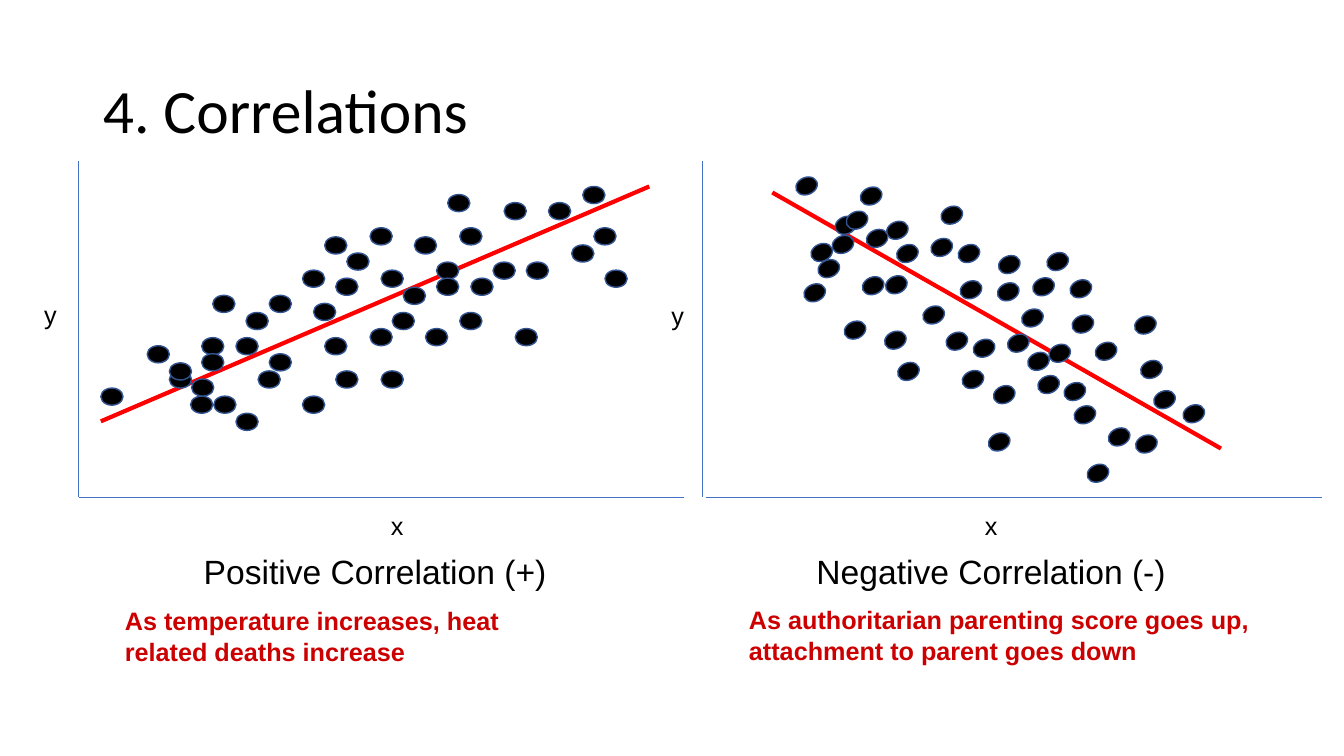
from dataclasses import dataclass

from lxml.etree import SubElement
from pptx import Presentation
from pptx.dml.color import RGBColor
from pptx.enum.shapes import MSO_CONNECTOR as Connector, MSO_SHAPE as Preset
from pptx.enum.text import MSO_ANCHOR as Anchor, PP_ALIGN as Align
from pptx.oxml.ns import qn
from pptx.util import Emu, Pt

PX = 9144  # one px is a hundredth of an inch


@dataclass(frozen=True)
class Theme:
    ink: str = "000000"
    axis: str = "4472C4"
    trend: str = "FF0000"
    dot_edge: str = "325491"
    note: str = "CC0000"
    title_font: str = "Calibri"
    body_font: str = "Arial"
    title_size: int = 44
    caption_size: int = 24
    label_size: int = 18
    axis_width: float = 0.5
    trend_width: float = 3
    dot_width: float = 1


THEME = Theme()
DOT_SIZE = (22, 17)

# Dot positions are measured from the top of the y axis
POSITIVE = dict(
    box=(78, 160, 600, 333), x_axis_start=0, trend=(22, 258, 566, 25), tilt=0,
    caption="Positive Correlation (+)", caption_box=(22, 382, 544, 50),
    note=["As temperature increases, heat", "related deaths increase"],
    note_box=(36, 436, 402, 71), note_wrap=False,
    axis_labels={"x": (300, 341, 33, 40), "y": (-44, 132, 33, 40)},
    dots=[
        (68, 183), (133, 133), (111, 233), (90, 208), (122, 175), (90, 200),
        (22, 225), (112, 216), (189, 191), (166, 150), (134, 233), (178, 208),
        (156, 175), (122, 191), (156, 250), (189, 133), (333, 75), (255, 116),
        (311, 150), (244, 175), (233, 141), (222, 108), (244, 75), (266, 91),
        (289, 66), (300, 108), (322, 125), (355, 100), (355, 116), (378, 66),
        (366, 33), (389, 116), (411, 100), (433, 166), (422, 41), (444, 100),
        (466, 41), (489, 83), (511, 66), (500, 25), (522, 108), (378, 150),
        (344, 166), (289, 166), (300, 208), (255, 208), (222, 233),
    ],
)
NEGATIVE = dict(
    box=(697, 160, 614, 333), x_axis_start=3, trend=(69, 31, 514, 285), tilt=-23,
    caption="Negative Correlation (-)", caption_box=(14, 382, 544, 50),
    note=["As authoritarian parenting score goes up, attachment to parent goes down"],
    note_box=(36, 435, 522, 71), note_wrap=True,
    axis_labels={"x": (270, 341, 33, 40), "y": (-41, 133, 33, 40)},
    dots=[
        (92, 16), (156, 26), (236, 45), (131, 55), (142, 50), (182, 60),
        (162, 68), (128, 74), (107, 82), (192, 83), (226, 77), (253, 83),
        (114, 98), (100, 122), (158, 115), (181, 114), (293, 94), (341, 91),
        (255, 119), (292, 121), (327, 116), (364, 118), (218, 144), (316, 147),
        (366, 153), (428, 154), (140, 159), (180, 169), (241, 170), (268, 177),
        (302, 172), (343, 182), (322, 190), (389, 180), (434, 198), (193, 200),
        (257, 208), (332, 213), (288, 223), (358, 220), (368, 243), (447, 228),
        (476, 242), (283, 270), (402, 265), (429, 272), (381, 301),
    ],
)


def px(*lengths):
    return [Emu(length * PX) for length in lengths]


def set_all(target, values):
    for name, value in values.items():
        setattr(target, name, value)


def write(frame, lines, color, paragraph_format=None, **font_format):
    for index, line in enumerate(lines):
        paragraph = frame.paragraphs[0] if index == 0 else frame.add_paragraph()
        set_all(paragraph, paragraph_format or {})
        run = paragraph.add_run()
        run.text = line
        set_all(run.font, font_format)
        run.font.color.rgb = RGBColor.from_string(color)


def add_label(slide, origin, box, lines, size, color=THEME.ink, bold=False,
              wrap=False, align=Align.LEFT):
    left, top, width, height = box
    label = slide.shapes.add_textbox(
        *px(origin[0] + left, origin[1] + top, width, height))
    label.text_frame.word_wrap = wrap
    write(label.text_frame, lines, color, {"alignment": align},
          name=THEME.body_font, size=Pt(size), bold=bold)


def add_line(slide, origin, ends, color, width):
    x, y = origin
    x1, y1, x2, y2 = ends
    line = slide.shapes.add_connector(
        Connector.STRAIGHT, *px(x + x1, y + y1, x + x2, y + y2))
    line.line.color.rgb = RGBColor.from_string(color)
    line.line.width = Pt(width)
    SubElement(line._element.spPr, qn("a:effectLst"))


def add_dot(slide, left, top, tilt):
    dot = slide.shapes.add_shape(Preset.OVAL, *px(left, top, *DOT_SIZE))
    dot.rotation = tilt
    dot.shadow.inherit = False
    dot.fill.solid()
    dot.fill.fore_color.rgb = RGBColor.from_string(THEME.ink)
    dot.line.color.rgb = RGBColor.from_string(THEME.dot_edge)
    dot.line.width = Pt(THEME.dot_width)


def add_title(slide, box, text):
    title = slide.shapes.title
    set_all(title, dict(zip(("left", "top", "width", "height"), px(*box))))
    set_all(title.text_frame, {"vertical_anchor": Anchor.MIDDLE, "word_wrap": True})
    write(title.text_frame, [text], THEME.ink,
          {"alignment": Align.LEFT, "line_spacing": 0.9},
          name=THEME.title_font, size=Pt(THEME.title_size))


def add_scatter(slide, panel):
    left, top, width, height = panel["box"]
    origin = (left, top)

    # Caption and example
    add_label(slide, origin, panel["caption_box"], [panel["caption"]],
              THEME.caption_size, wrap=True, align=Align.CENTER)
    add_label(slide, origin, panel["note_box"], panel["note"], THEME.label_size,
              color=THEME.note, bold=True, wrap=panel["note_wrap"])

    # Axes and trend line
    y_axis = (0, 0, 0, height)
    x_axis = (panel["x_axis_start"], height, width, height)
    for axis in (y_axis, x_axis):
        add_line(slide, origin, axis, THEME.axis, THEME.axis_width)
    add_line(slide, origin, panel["trend"], THEME.trend, THEME.trend_width)

    # Observations
    for x, y in panel["dots"]:
        add_dot(slide, left + x, top + y, panel["tilt"])

    # Axis names
    for name, box in panel["axis_labels"].items():
        add_label(slide, origin, box, [name], THEME.label_size)


def main():
    deck = Presentation()
    deck.slide_width, deck.slide_height = px(1333, 750)
    title_only = deck.slide_layouts[5]
    slide = deck.slides.add_slide(title_only)
    add_title(slide, (92, 40, 1150, 145), "4. Correlations")
    for panel in (POSITIVE, NEGATIVE):
        add_scatter(slide, panel)
    deck.save("out.pptx")


if __name__ == "__main__":
    main()
